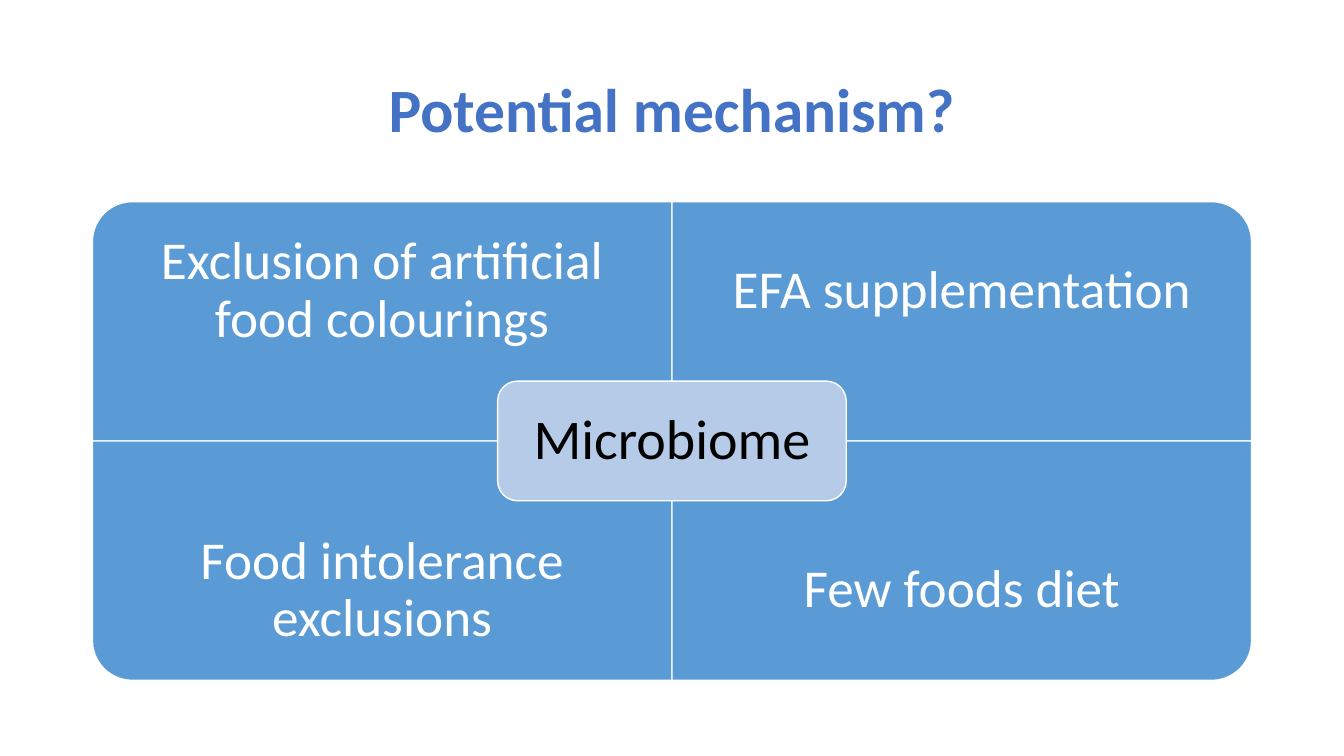
from dataclasses import dataclass

from pptx import Presentation
from pptx.dml.color import RGBColor
from pptx.enum.shapes import MSO_SHAPE
from pptx.enum.text import MSO_ANCHOR, PP_ALIGN
from pptx.util import Emu, Pt

PX = 9525  # EMU per px, 96 px to the inch
ROUND_ONE = MSO_SHAPE.ROUND_1_RECTANGLE
ROUND_ALL = MSO_SHAPE.ROUNDED_RECTANGLE
MIDDLE = MSO_ANCHOR.MIDDLE
CENTER = PP_ALIGN.CENTER


@dataclass(frozen=True)
class Theme:
    font: str = "Calibri"
    title: str = "4472C4"
    panel: str = "5B9BD5"
    hub: str = "B5CBE7"
    light: str = "FFFFFF"
    dark: str = "000000"
    title_size: int = 44
    panel_size: int = 38
    hub_size: int = 40
    line_width: int = 1


@dataclass(frozen=True)
class Box:
    x: int
    y: int
    w: int
    h: int

    def emu(self) -> list[Emu]:
        return [Emu(v * PX) for v in (self.x, self.y, self.w, self.h)]


@dataclass(frozen=True)
class Quadrant:
    text: str
    col: int
    row: int
    rotation: int


THEME = Theme()
GRID = Box(88, 192, 552, 228)  # the top left quadrant
LABEL_H = 171
HUB = Box(474, 363, 332, 114)
QUADRANTS = [
    Quadrant("Exclusion of artificial food colourings", 0, 0, 270),
    Quadrant("EFA supplementation", 1, 0, 0),
    Quadrant("Food intolerance exclusions", 0, 1, 180),
    Quadrant("Few foods diet", 1, 1, 90),
]


def put_text(sp, text: str, size: int, color: str, inset: int, bold: bool = False) -> None:
    tf = sp.text_frame
    tf.text = text
    tf.word_wrap = True
    tf.vertical_anchor = MIDDLE
    tf.margin_left = tf.margin_right = Emu(inset * PX)
    tf.margin_top = tf.margin_bottom = Emu(inset * PX)
    p = tf.paragraphs[0]
    p.alignment = CENTER
    p.line_spacing = 0.9
    font = p.runs[0].font
    font.name, font.size, font.bold = THEME.font, Pt(size), bold
    font.color.rgb = RGBColor.from_string(color)


def add_panel(s, kind, box: Box, fill: str):
    sp = s.shapes.add_shape(kind, *box.emu())
    sp.shadow.inherit = False
    sp.fill.solid()
    sp.fill.fore_color.rgb = RGBColor.from_string(fill)
    sp.line.color.rgb = RGBColor.from_string(THEME.light)
    sp.line.width = Pt(THEME.line_width)
    return sp


def add_quadrant(s, q: Quadrant) -> None:
    x, y = GRID.x + q.col * GRID.w, GRID.y + q.row * GRID.h
    w, h = GRID.w, GRID.h
    box = Box(x, y, w, h)
    if q.rotation % 180:  # a quarter turn swaps the sides about the centre
        box = Box(x + (w - h) // 2, y + (h - w) // 2, h, w)
    add_panel(s, ROUND_ONE, box, THEME.panel).rotation = q.rotation
    # Labels keep to the outer edge, clear of the hub
    label = Box(x, y + q.row * (h - LABEL_H), w, LABEL_H)
    tb = s.shapes.add_textbox(*label.emu())
    put_text(tb, q.text, THEME.panel_size, THEME.light, 29)


def main() -> None:
    prs = Presentation()
    prs.slide_width, prs.slide_height = Emu(1280 * PX), Emu(720 * PX)
    s = prs.slides.add_slide(prs.slide_layouts[6])

    # Title
    title = s.shapes.add_textbox(*Box(88, 38, 1104, 139).emu())
    put_text(title, "Potential mechanism?", THEME.title_size, THEME.title, 5, bold=True)

    # Four quadrants
    for q in QUADRANTS:
        add_quadrant(s, q)

    # Central hub
    hub = add_panel(s, ROUND_ALL, HUB, THEME.hub)
    put_text(hub, "Microbiome", THEME.hub_size, THEME.dark, 16)

    prs.save("out.pptx")


if __name__ == "__main__":
    main()
